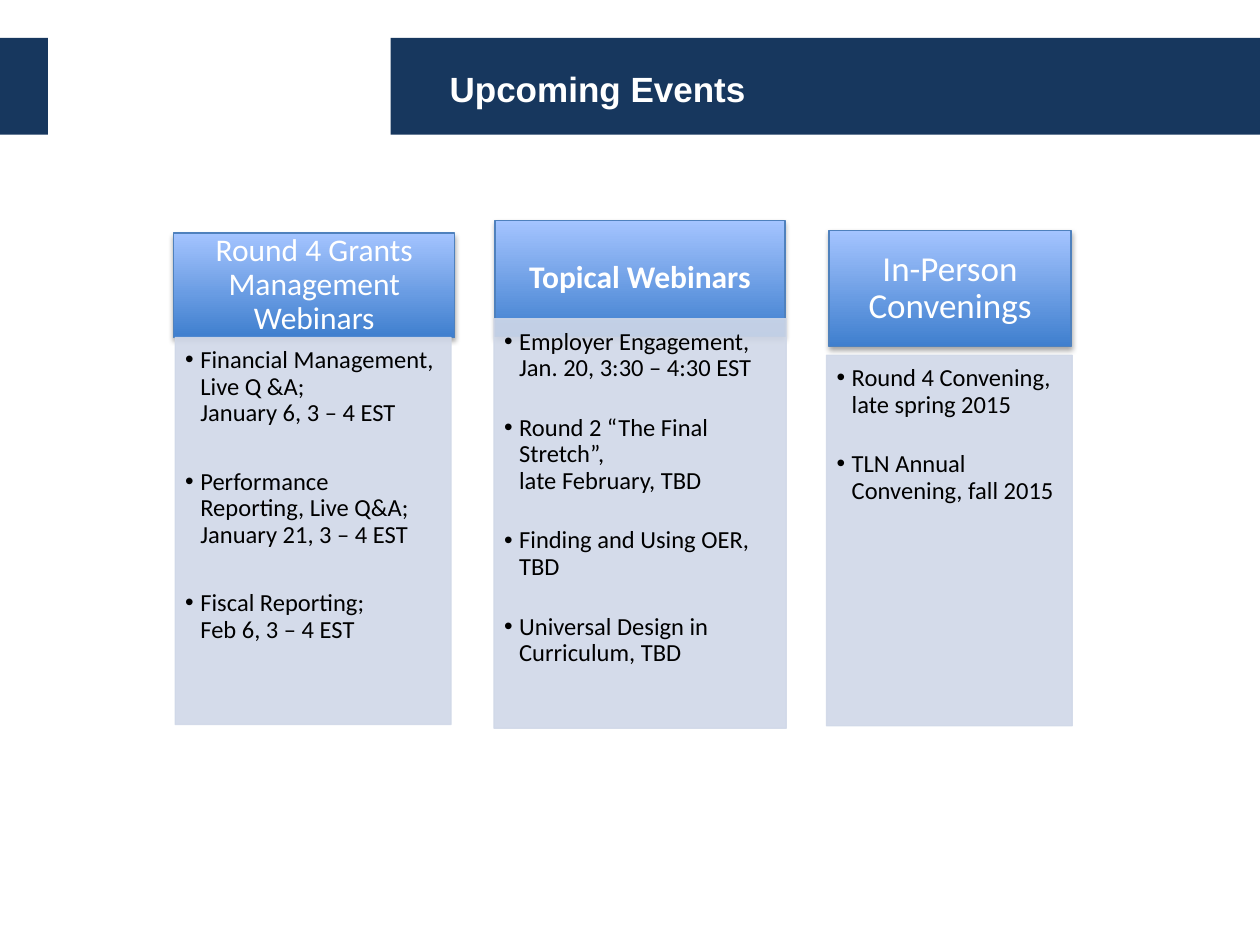
from lxml.etree import SubElement
from pptx import Presentation
from pptx.dml.color import RGBColor
from pptx.enum.shapes import MSO_SHAPE as Shape
from pptx.enum.text import MSO_ANCHOR as Anchor, PP_ALIGN as Align
from pptx.oxml.ns import qn
from pptx.util import Inches, Pt

NAVY, WHITE, BLACK = "17375E", "FFFFFF", "000000"
EDGE, PANEL = "4F81BD", "D0D8E8"
GRADIENT = ("3F7FCE", "A4C4FF")
HEADING_INSETS = (0.14, 0.08, 0.14, 0.08)
BODY_INSETS = (0.08, 0.08, 0.11, 0.12)

COLUMNS = [
    {
        "heading": "Round 4 Grants Management Webinars",
        "heading_box": (1.38, 1.85, 2.23, 0.83),
        "heading_format": {"size": Pt(18)},
        "body_box": (1.39, 2.68, 2.19, 3.07),
        "gap": 24,
        "events": [
            "Financial Management, Live Q &A;\vJanuary 6, 3 – 4 EST",
            "Performance Reporting, Live Q&A;\vJanuary 21, 3 – 4 EST",
            "Fiscal Reporting;\vFeb 6, 3 – 4 EST",
        ],
    },
    {
        "heading": "Topical Webinars",
        "heading_box": (3.93, 1.75, 2.3, 0.92),
        "heading_format": {"size": Pt(18), "bold": True},
        "body_box": (3.92, 2.53, 2.32, 3.25),
        "gap": 19,
        "events": [
            "Employer Engagement, Jan. 20, 3:30 – 4:30 EST",
            "Round 2 “The Final Stretch”,\vlate February, TBD",
            "Finding and Using OER, TBD",
            "Universal Design in Curriculum, TBD",
        ],
    },
    {
        "heading": "In-Person Convenings",
        "heading_box": (6.58, 1.83, 1.92, 0.92),
        "heading_format": {"size": Pt(20)},
        "body_box": (6.56, 2.82, 1.95, 2.94),
        "gap": 19,
        "events": [
            "Round 4 Convening, late spring 2015",
            "TLN Annual Convening, fall 2015",
        ],
    },
]


def rgb(value):
    return RGBColor.from_string(value)


class EventsSlide:
    """Draws the styled elements of one slide."""

    def __init__(self, slide, font="Calibri"):
        self.slide = slide
        self.font = font

    def rectangle(self, box):
        shape = self.slide.shapes.add_shape(Shape.RECTANGLE, *map(Inches, box))
        shape.shadow.inherit = False
        return shape

    def frame(self, shape, insets, anchor):
        frame = shape.text_frame
        sides = ("margin_left", "margin_top", "margin_right", "margin_bottom")
        values = dict(zip(sides, map(Inches, insets)))
        values.update(word_wrap=True, vertical_anchor=anchor)
        for name, value in values.items():
            setattr(frame, name, value)
        return frame

    def wording(self, paragraph, text, color, **values):
        paragraph.text = text
        for run in paragraph.runs:
            for name, value in {"name": self.font, **values}.items():
                setattr(run.font, name, value)
            run.font.color.rgb = rgb(color)

    def band(self, box):
        band = self.rectangle(box)
        band.fill.solid()
        band.fill.fore_color.rgb = rgb(NAVY)
        band.line.fill.background()

    def title(self, text, box):
        title = self.slide.shapes.add_textbox(*map(Inches, box))
        frame = self.frame(title, (0.1, 0.05, 0.1, 0.05), Anchor.MIDDLE)
        self.wording(frame.paragraphs[0], text, WHITE, name="Arial", size=Pt(20), bold=True)

    def heading(self, text, box, values):
        heading = self.rectangle(box)
        heading.fill.gradient()
        heading.fill.gradient_angle = 90
        for stop, color in zip(heading.fill.gradient_stops, GRADIENT):
            stop.color.rgb = rgb(color)
        heading.line.color.rgb = rgb(EDGE)
        heading.line.width = Pt(0.75)
        self.drop_shadow(heading)
        paragraph = self.frame(heading, HEADING_INSETS, Anchor.MIDDLE).paragraphs[0]
        paragraph.alignment = Align.CENTER
        paragraph.line_spacing = 0.9
        self.wording(paragraph, text, WHITE, **values)

    def drop_shadow(self, shape):
        effects = shape._element.spPr.find(qn("a:effectLst"))
        shadow = SubElement(effects, qn("a:outerShdw"), blurRad=str(Pt(3.1)),
                            dist=str(Pt(1.8)), dir="5400000", rotWithShape="0")
        color = SubElement(shadow, qn("a:srgbClr"), val=BLACK)
        SubElement(color, qn("a:alpha"), val="35000")

    def event_list(self, events, box, gap):
        panel = self.rectangle(box)
        panel.fill.solid()
        panel.fill.fore_color.rgb = rgb(PANEL)
        panel.line.color.rgb = rgb(PANEL)
        panel.line.width = Pt(0.75)
        for color in panel._element.spPr.iter(qn("a:srgbClr")):
            SubElement(color, qn("a:alpha"), val="90000")
        frame = self.frame(panel, BODY_INSETS, Anchor.TOP)
        for index, event in enumerate(events):
            paragraph = frame.add_paragraph() if index else frame.paragraphs[0]
            paragraph.alignment = Align.LEFT
            paragraph.line_spacing = 0.9
            paragraph.space_before = Pt(gap if index else 0)
            self.bullet(paragraph)
            self.wording(paragraph, event, BLACK, size=Pt(14))

    def bullet(self, paragraph):
        properties = paragraph._p.get_or_add_pPr()
        properties.set("marL", str(Inches(0.12)))
        properties.set("indent", str(Inches(-0.12)))
        SubElement(properties, qn("a:buFont"), typeface="Arial")
        SubElement(properties, qn("a:buChar"), char="•")


def main():
    deck = Presentation()
    deck.slide_width, deck.slide_height = Inches(10), Inches(7.5)
    page = EventsSlide(deck.slides.add_slide(deck.slide_layouts[6]))
    for left, width in ((3.1, 6.9), (0, 0.38)):
        page.band((left, 0.3, width, 0.77))
    page.title("Upcoming Events", (3.47, 0.32, 5.74, 0.77))
    for column in COLUMNS:
        page.heading(column["heading"], column["heading_box"], column["heading_format"])
        page.event_list(column["events"], column["body_box"], column["gap"])
    deck.save("out.pptx")


if __name__ == "__main__":
    main()
